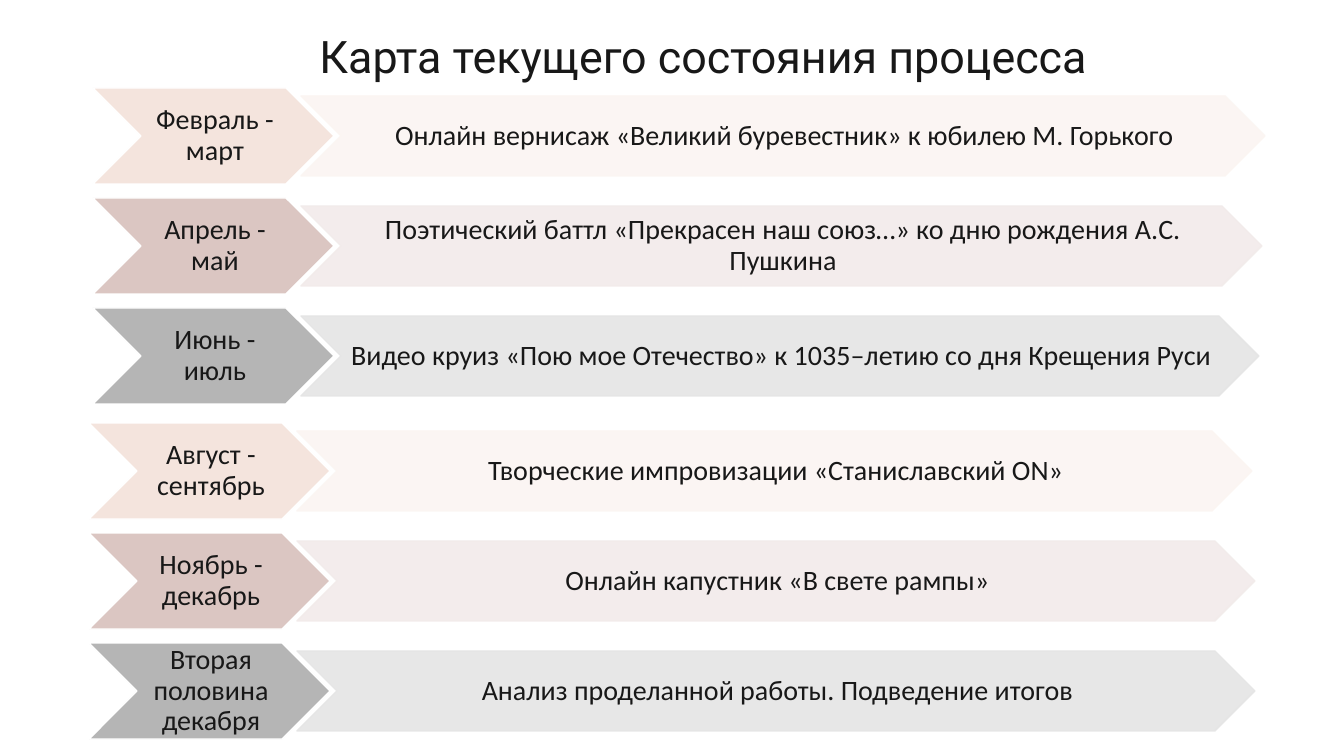
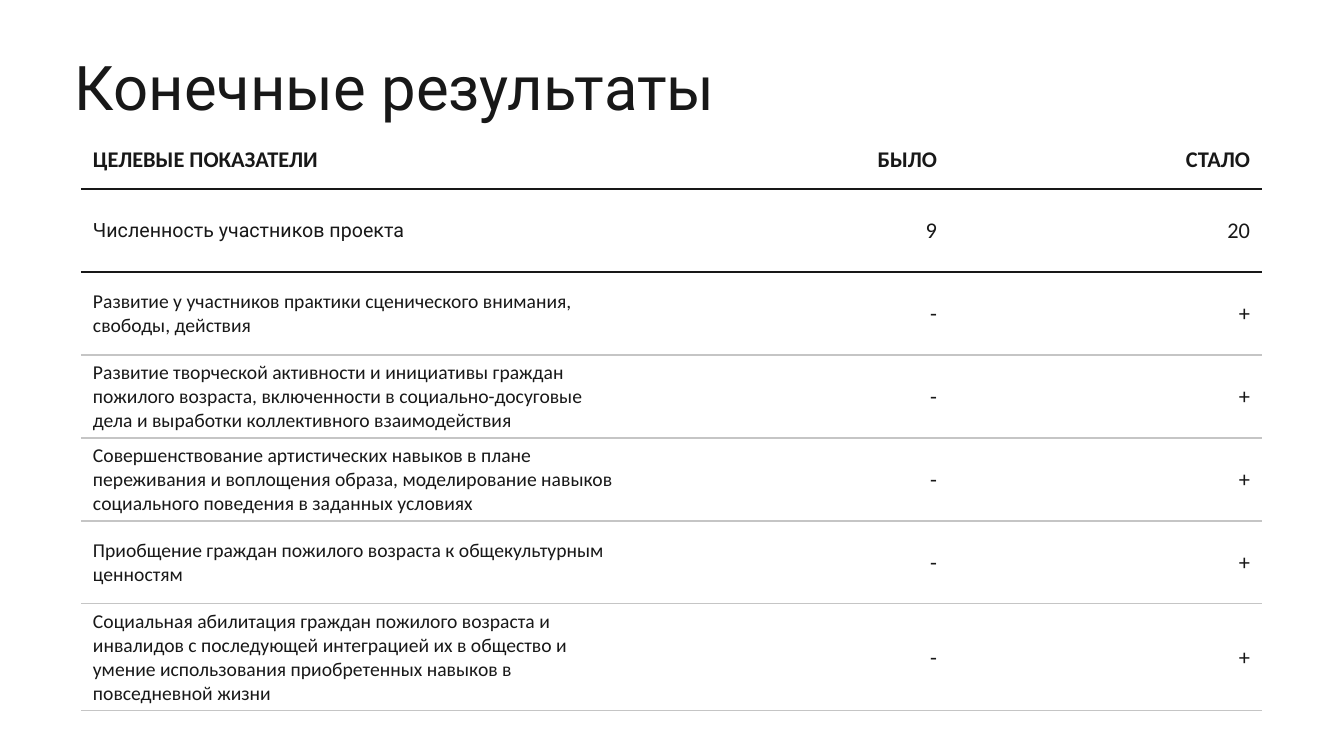
"""Builds two slides: a process map of chevrons and a table of final results."""
from lxml import etree
from pptx import Presentation
from pptx import util as u
from pptx.dml.color import RGBColor
from pptx.enum import shapes, text
from pptx.oxml.ns import qn

INK = RGBColor(0x18, 0x18, 0x18)
RULE = RGBColor(0xC5, 0xC5, 0xC5)
WHITE = RGBColor(0xFF, 0xFF, 0xFF)
TONES = [
    (RGBColor(0xF4, 0xE4, 0xDD), RGBColor(0xFB, 0xF5, 0xF2)),
    (RGBColor(0xDB, 0xC6, 0xC2), RGBColor(0xF2, 0xEB, 0xEA)),
    (RGBColor(0xB5, 0xB5, 0xB5), RGBColor(0xE5, 0xE5, 0xE5)),
]
BODY, HEAD = "Calibri", "Roboto"
LEFT, CENTER, RIGHT = text.PP_ALIGN.LEFT, text.PP_ALIGN.CENTER, text.PP_ALIGN.RIGHT
SCALE = 914400 / 100.8

STAGES = [
    (93, 88, [
        ("Февраль - март", "Онлайн вернисаж «Великий буревестник» к юбилею М. Горького", 964),
        ("Апрель - май", "Поэтический баттл «Прекрасен наш союз…» ко дню рождения А.С. Пушкина", 961),
        ("Июнь - июль", "Видео круиз «Пою мое Отечество» к 1035–летию со дня Крещения Руси", 958),
    ]),
    (89, 423, [
        ("Август - сентябрь", "Творческие импровизации «Станиславский ON»", 955),
        ("Ноябрь - декабрь", "Онлайн капустник «В свете рампы»", 958),
        ("Вторая половина декабря", "Анализ проделанной работы. Подведение итогов", 958),
    ]),
]
STEP = 110

RESULTS = [
    ("ЦЕЛЕВЫЕ ПОКАЗАТЕЛИ", "БЫЛО", "СТАЛО"),
    ("Численность участников проекта", "9", "20"),
    ("Развитие у участников практики сценического внимания, свободы, действия", "-", "+"),
    ("Развитие творческой активности и инициативы граждан пожилого возраста, включенности "
     "в социально-досуговые дела и выработки коллективного взаимодействия", "-", "+"),
    ("Совершенствование артистических навыков в плане переживания и воплощения образа, "
     "моделирование навыков социального поведения в заданных условиях", "-", "+"),
    ("Приобщение граждан пожилого возраста к общекультурным ценностям", "-", "+"),
    ("Социальная абилитация граждан пожилого возраста и инвалидов с последующей интеграцией "
     "их в общество и умение использования приобретенных навыков в повседневной жизни", "-", "+"),
]
COLS = [555, 313, 313]
ROWS = [58] + [83] * 5 + [107]
DARK = 2


def px(n):
    return u.Emu(round(n * SCALE))


def write(frame, words, size=20, font=BODY, align=CENTER, bold=False, lead=0.9):
    para = frame.paragraphs[0]
    para.alignment = align
    para.line_spacing = lead
    run = para.add_run()
    run.text = words
    run.font.size = u.Pt(size)
    run.font.name = font
    run.font.bold = bold
    run.font.color.rgb = INK


def title(slide, words, top, size, align):
    box = slide.shapes.add_textbox(px(65), px(top), px(1277), px(80))
    box.text_frame.word_wrap = True
    write(box.text_frame, words, size=size, font=HEAD, align=align)


def chevron(slide, words, box, tone, edge, alpha=None):
    shape = slide.shapes.add_shape(shapes.MSO_SHAPE.CHEVRON, *map(px, box))
    shape.shadow.inherit = False
    shape.fill.solid()
    shape.fill.fore_color.rgb = tone
    shape.line.color.rgb = edge
    shape.line.width = u.Pt(1)
    if alpha:
        for clr in shape.element.spPr.iter(qn("a:srgbClr")):
            etree.SubElement(clr, qn("a:alpha"), val=str(alpha * 1000))
    frame = shape.text_frame
    frame.word_wrap = True
    frame.vertical_anchor = text.MSO_ANCHOR.MIDDLE
    frame.margin_left, frame.margin_right = px(3), 0
    frame.margin_top = frame.margin_bottom = px(1)
    write(frame, words)


def border(cell, side, color=None, width=1):
    line = etree.SubElement(cell._tc.get_or_add_tcPr(), qn("a:ln" + side), w=str(u.Pt(width)))
    if color is None:
        etree.SubElement(line, qn("a:noFill"))
    else:
        fill = etree.SubElement(line, qn("a:solidFill"))
        etree.SubElement(fill, qn("a:srgbClr"), val=str(color))


def rule(row):
    """Gives the colour and width of the line under a row."""
    if row < 0:
        return None, 1
    return (INK, 1.5) if row < DARK else (RULE, 1)


def stages(slide):
    title(slide, "Карта текущего состояния процесса", 30, 32, CENTER)
    for left, top, items in STAGES:
        for i, (month, event, width) in enumerate(items):
            y = top + i * STEP
            deep, pale = TONES[i]
            chevron(slide, month, (left, y, 241, 96), deep, WHITE)
            chevron(slide, event, (left + 208, y + 8, width, 80), pale, pale, alpha=90)


def results(slide):
    title(slide, "Конечные результаты", 52, 44, LEFT)
    grid = slide.shapes.add_table(len(ROWS), len(COLS), px(81), px(131),
                                  px(sum(COLS)), px(sum(ROWS))).table
    grid.first_row = grid.horz_banding = False
    for col, width in zip(grid.columns, COLS):
        col.width = px(width)
    for r, (high, row) in enumerate(zip(ROWS, RESULTS)):
        grid.rows[r].height = px(high)
        for c, words in enumerate(row):
            cell = grid.cell(r, c)
            cell.vertical_anchor = text.MSO_ANCHOR.MIDDLE
            cell.margin_left = cell.margin_right = px(12)
            cell.margin_top = cell.margin_bottom = px(6)
            border(cell, "L")
            border(cell, "R")
            border(cell, "T", *rule(r - 1))
            border(cell, "B", *rule(r))
            cell.fill.background()
            write(cell.text_frame, words, size=14 if r and not c else 16,
                  font=HEAD if (r, c) == (1, 0) else BODY,
                  align=RIGHT if c else LEFT, bold=r == 0, lead=1.0)


def main():
    deck = Presentation()
    deck.slide_width, deck.slide_height = px(1344), px(756)
    for build in (stages, results):
        build(deck.slides.add_slide(deck.slide_layouts[6]))
    deck.save("out.pptx")


if __name__ == "__main__":
    main()
